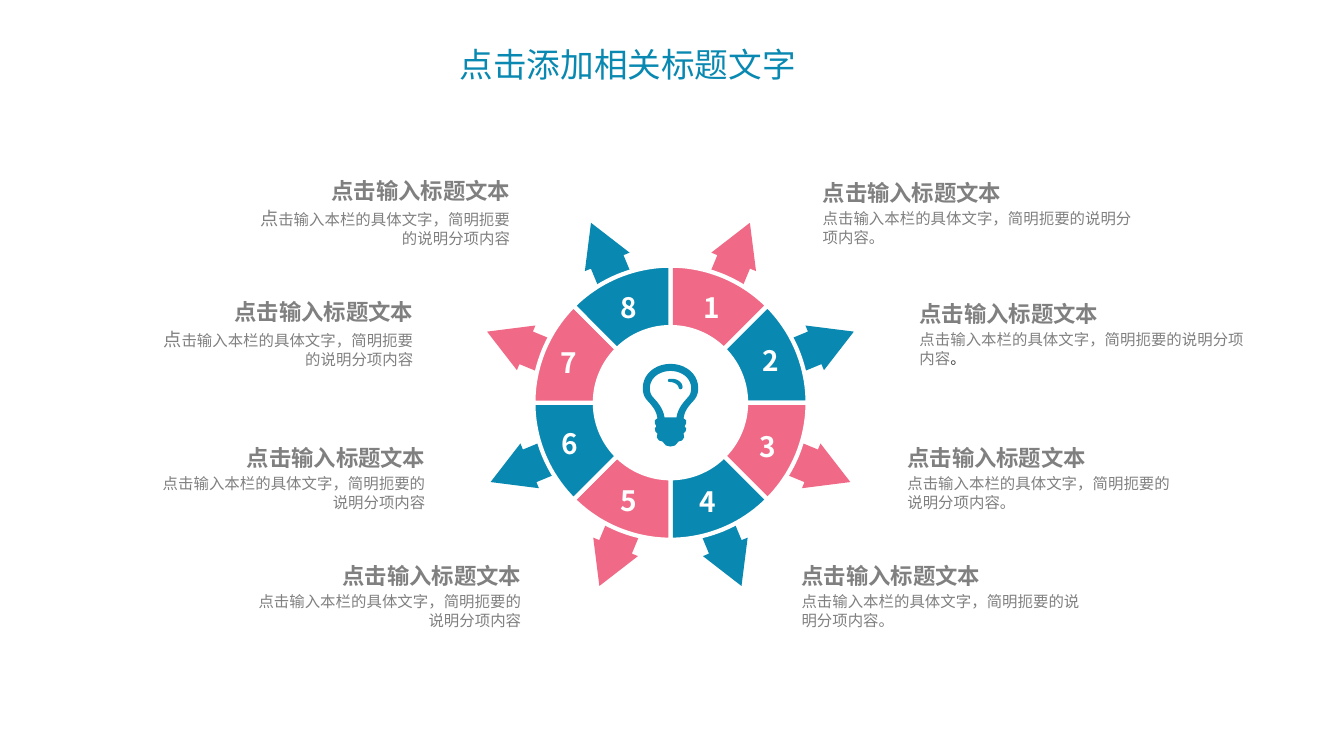
"""Builds a slide with an eight-part wheel, arrows and captions."""
from math import cos, pi, radians, sin

from lxml.etree import SubElement
from pptx import Presentation
from pptx.dml.color import RGBColor
from pptx.enum.text import MSO_ANCHOR, PP_ALIGN
from pptx.oxml.ns import qn
from pptx.util import Inches, Pt

FONT = "Noto Sans CJK SC"
COLORS = {"blue": "0989B1", "pink": "F06A87", "gray": "808080", "dark": "404040", "white": "FFFFFF"}
TITLE = "点击添加相关标题文字"
HEAD = "点击输入标题文本"
REST = "击输入本栏的具体文字，简明扼要的说明分项内容"
CAPTIONS = [
    {"at": (8.03, 1.65, 3.46), "first": 11, "stop": "gray"},
    {"at": (8.99, 2.85, 3.56), "first": 11, "stop": "dark"},
    {"at": (8.87, 4.28, 2.93), "first": 11, "stop": "gray"},
    {"at": (7.82, 5.45, 3.17), "first": 11, "stop": "gray"},
    {"at": (2.31, 1.65, 2.88), "first": 13, "stop": None},
    {"at": (1.35, 2.85, 2.88), "first": 13, "stop": None},
    {"at": (1.47, 4.28, 2.88), "first": 11, "stop": None},
    {"at": (2.35, 5.45, 2.95), "first": 11, "stop": None},
]
NUMBERS = [(6.79, 2.9), (7.38, 3.43), (7.35, 4.28), (6.76, 4.83),
           (5.97, 4.82), (5.39, 4.25), (5.38, 3.45), (5.97, 2.9)]

CX, CY = 6.65, 3.995
R_OUT, R_IN = 1.36, 0.75
STEP = 360 / len(NUMBERS)
ARROW_SHIFT = 0.045
ARROW = [(0.75, -0.175), (1.53, -0.175), (1.53, -0.24), (1.95, 0),
         (1.53, 0.24), (1.53, 0.175), (0.75, 0.175)]

BULB_OUTER = [(0, 3.61), (0.15, 3.61), (0.275, 3.71), (0.275, 3.85),
              (0.275, 3.91), (0.255, 3.95), (0.215, 3.99),
              (0.17, 4.04), (0.14, 4.08), (0.13, 4.15)]
BULB_BASE = [(0.155, 4.17), (0.155, 4.2), (0.14, 4.23), (0.155, 4.25), (0.15, 4.28), (0.13, 4.3),
             (0.135, 4.34), (0.115, 4.37), (0.08, 4.38), (0.045, 4.42), (0, 4.43)]
BULB_INNER = [(0, 3.68), (0.11, 3.68), (0.205, 3.75), (0.205, 3.85),
              (0.205, 3.89), (0.195, 3.92), (0.165, 3.95),
              (0.12, 4), (0.07, 4.06), (0.06, 4.14)]
GLINT = [(-0.01, 3.76), (0.06, 3.75), (0.12, 3.79), (0.12, 3.84), (0.12, 3.87), (0.08, 3.87),
         (0.08, 3.84), (0.07, 3.81), (0.03, 3.79), (-0.01, 3.79),
         (-0.03, 3.79), (-0.03, 3.76), (-0.01, 3.76)]


def rgb(name):
    return RGBColor.from_string(COLORS[name])


def polar(r, deg, side=0):
    a = radians(deg)
    return CX + r * sin(a) + side * cos(a), CY - r * cos(a) + side * sin(a)


def bezier(pts, n=10):
    out = [pts[0]]
    for k in range(0, len(pts) - 1, 3):
        quad = pts[k:k + 4]
        for j in range(1, n + 1):
            t = j / n
            w = ((1 - t) ** 3, 3 * t * (1 - t) ** 2, 3 * t * t * (1 - t), t ** 3)
            out.append(tuple(sum(c * p[d] for c, p in zip(w, quad)) for d in (0, 1)))
    return out


def mirror(half):
    return [(CX + x, y) for x, y in half] + [(CX - x, y) for x, y in reversed(half)]


def outline(s, contours, color, border=None):
    emu = [[(Inches(x), Inches(y)) for x, y in c] for c in contours]
    fb = s.shapes.build_freeform(*emu[0][0], scale=1.0)
    for i, pts in enumerate(emu):
        if i:
            fb.move_to(*pts[0])
        fb.add_line_segments(pts[1:], close=True)
    sp = fb.convert_to_shape()
    sp.shadow.inherit = False
    sp.fill.solid()
    sp.fill.fore_color.rgb = rgb(color)
    if border:
        sp.line.color.rgb = rgb(border)
        sp.line.width = Pt(3)
    else:
        sp.line.fill.background()


def write(p, text, color, **fmt):
    r = p.add_run()
    r.text = text
    for key, value in {"name": FONT, **fmt}.items():
        setattr(r.font, key, value)
    r.font.color.rgb = rgb(color)
    SubElement(r.font._element, qn("a:ea")).set("typeface", FONT)


def text_box(s, x, y, w, h):
    tf = s.shapes.add_textbox(*map(Inches, (x, y, w, h))).text_frame
    fmt = {"word_wrap": True, "vertical_anchor": MSO_ANCHOR.MIDDLE,
           "margin_left": Inches(0.13), "margin_right": Inches(0.13),
           "margin_top": Inches(0.07), "margin_bottom": Inches(0.07)}
    for key, value in fmt.items():
        setattr(tf, key, value)
    return tf


def add_wheel(s):
    for i in range(len(NUMBERS)):
        color = ("pink", "blue")[i % 2]
        start, mid = i * STEP, (i + 0.5) * STEP
        shift = ARROW_SHIFT if mid < 180 else -ARROW_SHIFT
        outline(s, [[polar(r, mid, side + shift) for r, side in ARROW]], color)
        angles = [start + k * STEP / 20 for k in range(21)]
        ring = [polar(R_OUT, a) for a in angles] + [polar(R_IN, a) for a in reversed(angles)]
        outline(s, [ring], color, "white")


def add_bulb(s):
    outline(s, [mirror(bezier(BULB_OUTER) + BULB_BASE), mirror(bezier(BULB_INNER))], "blue")
    outline(s, [[(CX + x, y) for x, y in bezier(GLINT)]], "blue")


def add_caption(s, at, first, stop):
    tf = text_box(s, *at, 0.92)
    head, body = tf.paragraphs[0], tf.add_paragraph()
    head.alignment = body.alignment = PP_ALIGN.LEFT if stop else PP_ALIGN.RIGHT
    body.space_before = Pt(2.2)
    write(head, HEAD, "gray", size=Pt(16), bold=True)
    if first == 11:
        write(body, "点" + REST + ("。" if stop == "gray" else ""), "gray", size=Pt(11))
    else:
        write(body, "点", "gray", size=Pt(first))
        write(body, REST, "gray", size=Pt(11))
    if stop == "dark":
        write(body, "。", stop, size=Pt(11))


def main():
    prs = Presentation()
    prs.slide_width, prs.slide_height = Inches(13.33), Inches(7.5)
    s = prs.slides.add_slide(prs.slide_layouts[5])
    title = s.shapes.title
    title.left, title.top, title.width, title.height = map(Inches, (4.46, 0.39, 3.57, 0.5))
    p = title.text_frame.paragraphs[0]
    p.alignment = PP_ALIGN.LEFT
    write(p, TITLE, "blue", size=Pt(24))
    add_wheel(s)
    add_bulb(s)
    for caption in CAPTIONS:
        add_caption(s, **caption)
    for n, (x, y) in enumerate(NUMBERS, 1):
        p = text_box(s, x, y, 0.53, 0.29).paragraphs[0]
        p.alignment = PP_ALIGN.CENTER
        write(p, str(n), "white", size=Pt(20), bold=True)
    prs.save("out.pptx")


if __name__ == "__main__":
    main()
